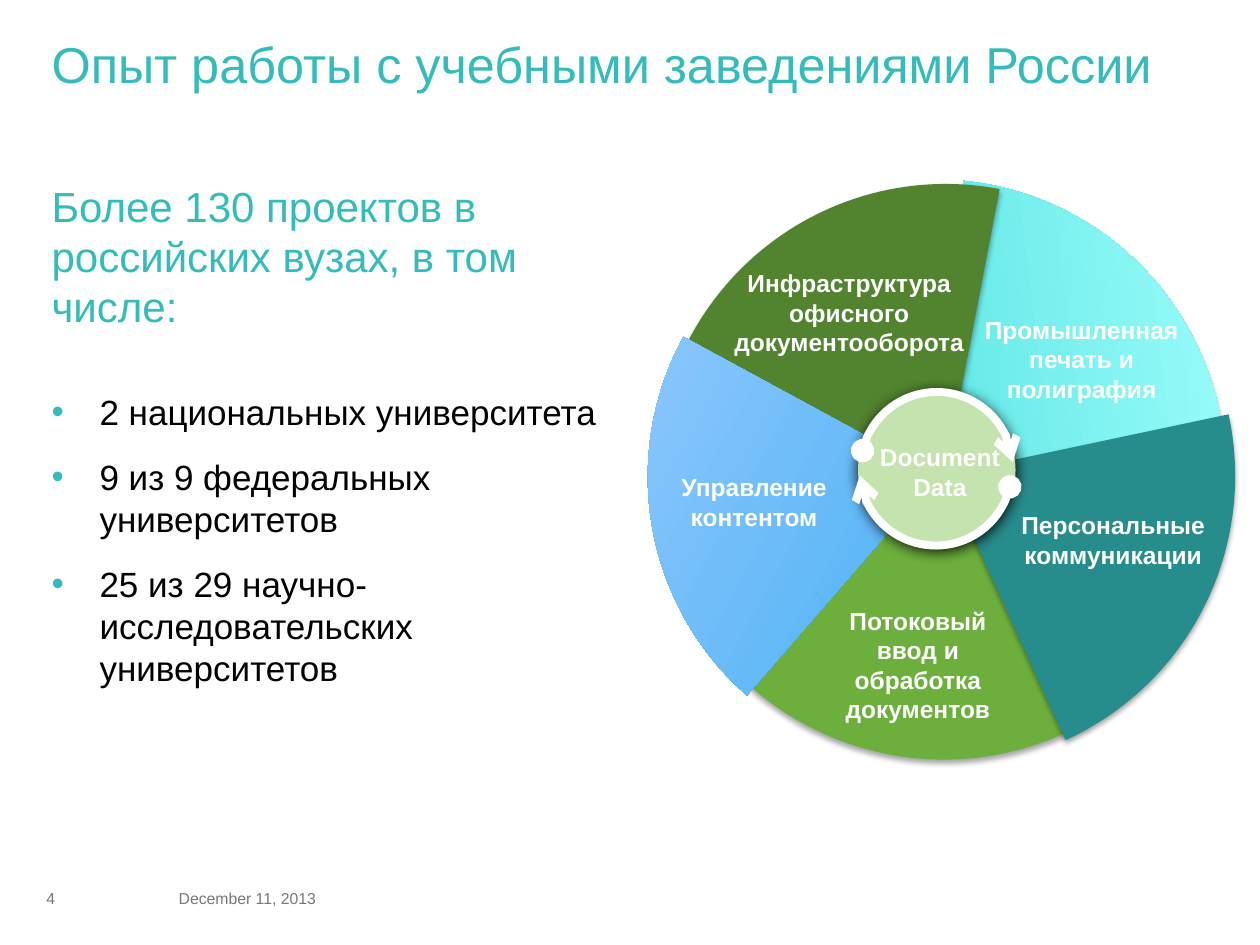
from dataclasses import dataclass
from lxml import etree
from pptx import Presentation
from pptx import util as u
from pptx.dml.color import RGBColor
from pptx.enum import shapes, text
from pptx.oxml import ns


@dataclass(frozen=True)
class Theme:
    font: str = "Arial"
    teal: str = "34BCBA"
    black: str = "000000"
    white: str = "FFFFFF"
    gray: str = "777777"
    hub: str = "C4E3AE"
    title: float = 28.8
    head: float = 24
    body: float = 20
    label: float = 14
    foot: float = 9


T = Theme()
ALIGN, ANCHOR = text.PP_ALIGN, text.MSO_ANCHOR
KIND = shapes.MSO_SHAPE
SOFT = dict(alpha=35, blur=3.1, dist=1.8)
DEEP = dict(alpha=100, blur=8.5, dist=1)

# left, top, width, height, turn, fill (two colours make a gradient), shadow
WEDGES = [
    (5.16, 1.42, 4.63, 4.6, 227.5, ["6DAF3D"], SOFT),
    (5.11, 1.44, 4.63, 4.6, 83.1, ["20D0CE", "A1FFFD"], SOFT),
    (5.2, 1.46, 4.6, 4.63, 10.8, ["52832E"], SOFT),
    (5.13, 1.47, 4.63, 4.6, 298.5, ["0E9CEF", "AAD1FF"], None),
    (5.2, 1.45, 4.6, 4.63, 155.6, ["278D8C"], SOFT),
]
LABELS = [
    ((5.64, 2.08, 2.2, 0.66), "Инфраструктура офисного документооборота"),
    ((7.65, 2.45, 1.87, 0.47), "Промышленная печать и полиграфия"),
    ((7.9, 4, 1.87, 0.57), "Персональные коммуникации"),
    ((6.38, 4.76, 1.81, 0.66), "Потоковый ввод и обработка документов"),
    ((5.17, 3.7, 1.63, 0.47), "Управление контентом"),
]
ITEMS = [
    "2 национальных университета",
    "9 из 9 федеральных университетов",
    "25 из 29 научно-исследовательских университетов",
]


def rgb(tone):
    return RGBColor.from_string(tone)


def inch(nums):
    return [u.Inches(n) for n in nums]


def apply(item, form):
    for key, val in form.items():
        setattr(item, key, val)


def node(parent, tag, **attrs):
    return etree.SubElement(parent, ns.qn(tag), attrs)


def frame(slide, at, inset=None, anchor=ANCHOR.TOP):
    box = slide.shapes.add_textbox(*inch(at)).text_frame
    apply(box, dict(word_wrap=True, vertical_anchor=anchor))
    if inset is not None:
        sides = ("left", "top", "right", "bottom")
        apply(box, {f"margin_{side}": u.Inches(inset) for side in sides})
    return box


def write(para, words, size, tone, bold=False, **form):
    apply(para, form)
    run = para.add_run()
    run.text = words
    apply(run.font, dict(name=T.font, size=u.Pt(size), bold=bold))
    run.font.color.rgb = rgb(tone)


def bullet(para):
    props = para._p.get_or_add_pPr()
    indent = u.Inches(0.38)
    apply_attrs = dict(marL=indent, indent=-indent)
    for key, val in apply_attrs.items():
        props.set(key, str(val))
    node(node(props, "a:buClr"), "a:srgbClr", val=T.teal)
    node(props, "a:buFont", typeface=T.font)
    node(props, "a:buChar", char="•")


def shade(shape, alpha, blur, dist):
    """Give the shape a black shadow that falls straight down."""
    glow = shape._element.spPr.find(ns.qn("a:effectLst"))
    drop = node(glow, "a:outerShdw", blurRad=str(u.Pt(blur)),
                dist=str(u.Pt(dist)), dir="5400000", rotWithShape="0")
    tone = node(drop, "a:srgbClr", val=T.black)
    node(tone, "a:alpha", val=str(alpha * 1000))


def solid(slide, kind, at, tones, shadow=None):
    shape = slide.shapes.add_shape(kind, *inch(at))
    shape.line.fill.background()
    if len(tones) == 1:
        shape.fill.solid()
        shape.fill.fore_color.rgb = rgb(tones[0])
    else:
        shape.fill.gradient()
        shape.fill.gradient_angle = 90
        for stop, tone in zip(shape.fill.gradient_stops, tones):
            stop.color.rgb = rgb(tone)
    shape.shadow.inherit = False
    if shadow:
        shade(shape, **shadow)
    return shape


def wedge(slide, at, turn, tones, shadow):
    shape = solid(slide, KIND.PIE, at, tones, shadow)
    shape.adjustments[0], shape.adjustments[1] = 115.46, 162
    shape.rotation = turn


def arrow(slide, at, turn):
    """Draw a half circle with a dot at its start and an arrowhead at its end."""
    arc = slide.shapes.add_shape(KIND.ARC, *inch(at))
    arc.adjustments[0], arc.adjustments[1] = 169.95, 51.21
    arc.rotation = turn
    arc.fill.background()
    arc.line.color.rgb = rgb(T.white)
    arc.line.width = u.Pt(4.5)
    arc.shadow.inherit = False
    line = arc._element.spPr.find(ns.qn("a:ln"))
    node(line, "a:headEnd", type="oval")
    node(line, "a:tailEnd", type="arrow")


def label(slide, at, *lines):
    box = frame(slide, at)
    for i, words in enumerate(lines):
        para = box.add_paragraph() if i else box.paragraphs[0]
        write(para, words, T.label, T.white, bold=True, alignment=ALIGN.CENTER)


def body(slide):
    box = frame(slide, (0.41, 1.43, 4.45, 5.2), inset=0)
    write(box.paragraphs[0], "Более 130 проектов в российских вузах, в том числе:",
          T.head, T.teal)
    for i, words in enumerate(ITEMS):
        para = box.add_paragraph()
        bullet(para)
        write(para, words, T.body, T.black, space_after=u.Pt(7),
              space_before=u.Pt(6 if i else 34))


def wheel(slide):
    for *at, turn, tones, shadow in WEDGES:
        wedge(slide, at, turn, tones, shadow)
    for at, words in LABELS:
        label(slide, at, words)
    solid(slide, KIND.OVAL, (6.81, 3.1, 1.25, 1.26), [T.hub], DEEP)
    arrow(slide, (6.83, 3.11, 1.21, 1.21), 270)
    arrow(slide, (6.82, 3.12, 1.21, 1.21), 90)
    label(slide, (6.86, 3.46, 1.2, 0.57), "Document", "Data")


def main():
    deck = Presentation()
    deck.slide_width, deck.slide_height = inch((10, 7.5))
    slide = deck.slides.add_slide(deck.slide_layouts[6])
    title = frame(slide, (0.41, 0.32, 9.2, 0.9), inset=0)
    write(title.paragraphs[0], "Опыт работы с учебными заведениями России",
          T.title, T.teal, line_spacing=0.9)
    body(slide)
    for left, width, words in ((1.32, 2.2, "December 11, 2013"), (0.27, 1, "4")):
        foot = frame(slide, (left, 6.93, width, 0.4), anchor=ANCHOR.MIDDLE)
        write(foot.paragraphs[0], words, T.foot, T.gray)
    wheel(slide)
    deck.save("out.pptx")


if __name__ == "__main__":
    main()
